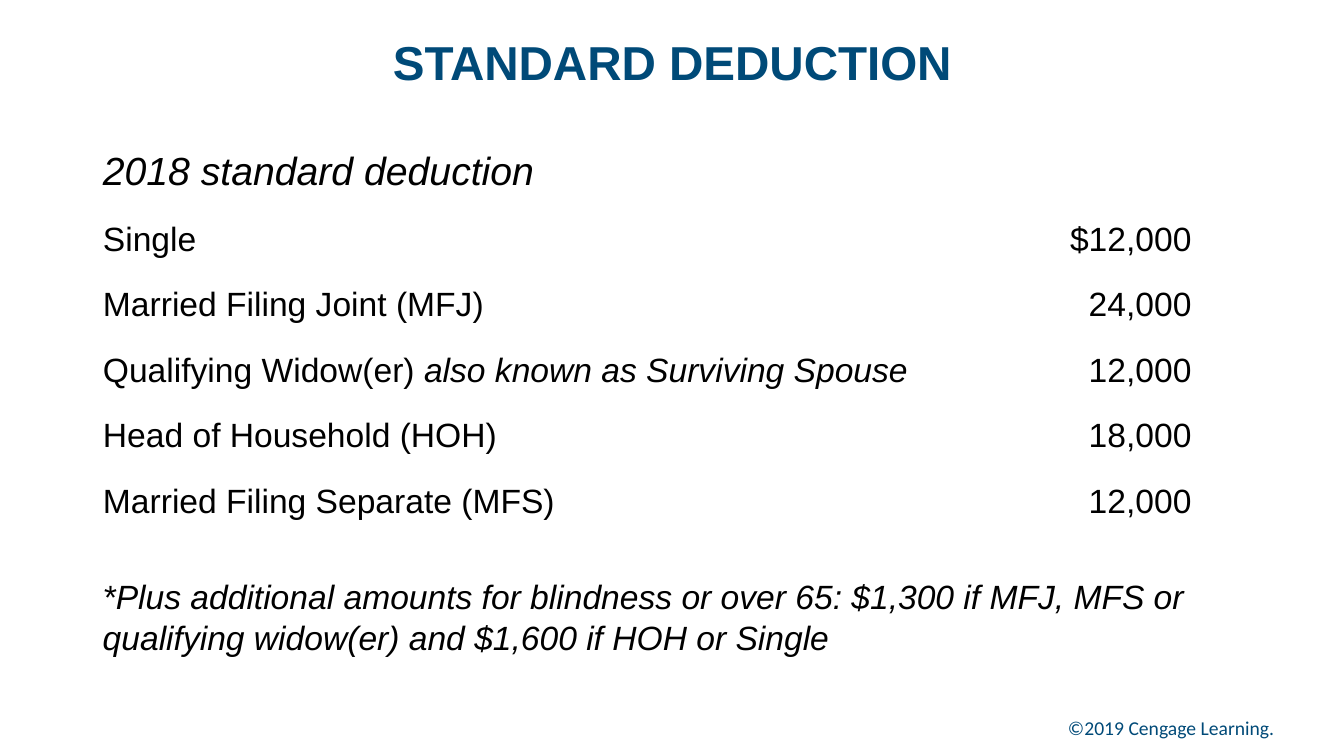
from pptx import Presentation
from pptx.dml.color import RGBColor
from pptx.enum.text import MSO_ANCHOR, PP_ALIGN
from pptx.util import Cm, Pt

COLORS = {"navy": "004A78", "black": "000000"}


def add_text(p, text, size=24, font="Arial", color="black", bold=False, italic=False, align=PP_ALIGN.LEFT):
    p.alignment = align
    r = p.add_run()
    r.text = text
    r.font.size = Pt(size)
    r.font.name = font
    r.font.bold = bold
    r.font.italic = italic
    r.font.color.rgb = RGBColor.from_string(COLORS[color])


prs = Presentation()
prs.slide_width, prs.slide_height = Cm(33.87), Cm(19.05)
s = prs.slides.add_slide(prs.slide_layouts[5])

title = s.shapes.title
title.left, title.top, title.width, title.height = Cm(2.34), Cm(0.38), Cm(29.21), Cm(2.54)
tf = title.text_frame
tf.vertical_anchor = MSO_ANCHOR.MIDDLE
p = tf.paragraphs[0]
p.line_spacing = 0.9
add_text(p, "STANDARD DEDUCTION", size=34, color="navy", bold=True, align=PP_ALIGN.CENTER)

deductions = [
    ("Single", "", "$12,000"),
    ("Married Filing Joint (MFJ)", "", "24,000"),
    ("Qualifying Widow(er) ", "also known as Surviving Spouse", "12,000"),
    ("Head of Household (HOH)", "", "18,000"),
    ("Married Filing Separate (MFS)", "", "12,000"),
]
table = s.shapes.add_table(len(deductions) + 1, 2, Cm(2.34), Cm(3.66), Cm(27.94), Cm(10.03)).table
table.first_row = False
table.horz_banding = False
table.columns[0].width, table.columns[1].width = Cm(23.37), Cm(4.57)
for row in table.rows:
    row.height = Cm(1.65)
    for cell in row.cells:
        cell.fill.background()
table.rows[0].height = Cm(1.78)

add_text(table.cell(0, 0).text_frame.paragraphs[0], "2018 standard deduction", size=28, italic=True)
for i, (status, alias, amount) in enumerate(deductions, 1):
    p = table.cell(i, 0).text_frame.paragraphs[0]
    add_text(p, status)
    if alias:
        add_text(p, alias, italic=True)
    add_text(table.cell(i, 1).text_frame.paragraphs[0], amount, align=PP_ALIGN.RIGHT)

note = s.shapes.add_textbox(Cm(2.34), Cm(14.4), Cm(29.21), Cm(2.44))
tf = note.text_frame
tf.word_wrap = True
add_text(
    tf.paragraphs[0],
    "*Plus additional amounts for blindness or over 65: $1,300 if MFJ, MFS or "
    "qualifying widow(er) and $1,600 if HOH or Single",
    italic=True,
)

footer = s.shapes.add_textbox(Cm(8.03), Cm(17.5), Cm(24.34), Cm(1.27))
tf = footer.text_frame
tf.word_wrap = True
tf.vertical_anchor = MSO_ANCHOR.BOTTOM
add_text(tf.paragraphs[0], "©2019 Cengage Learning.", size=14, font="Calibri", color="navy", align=PP_ALIGN.RIGHT)

prs.save("out.pptx")
